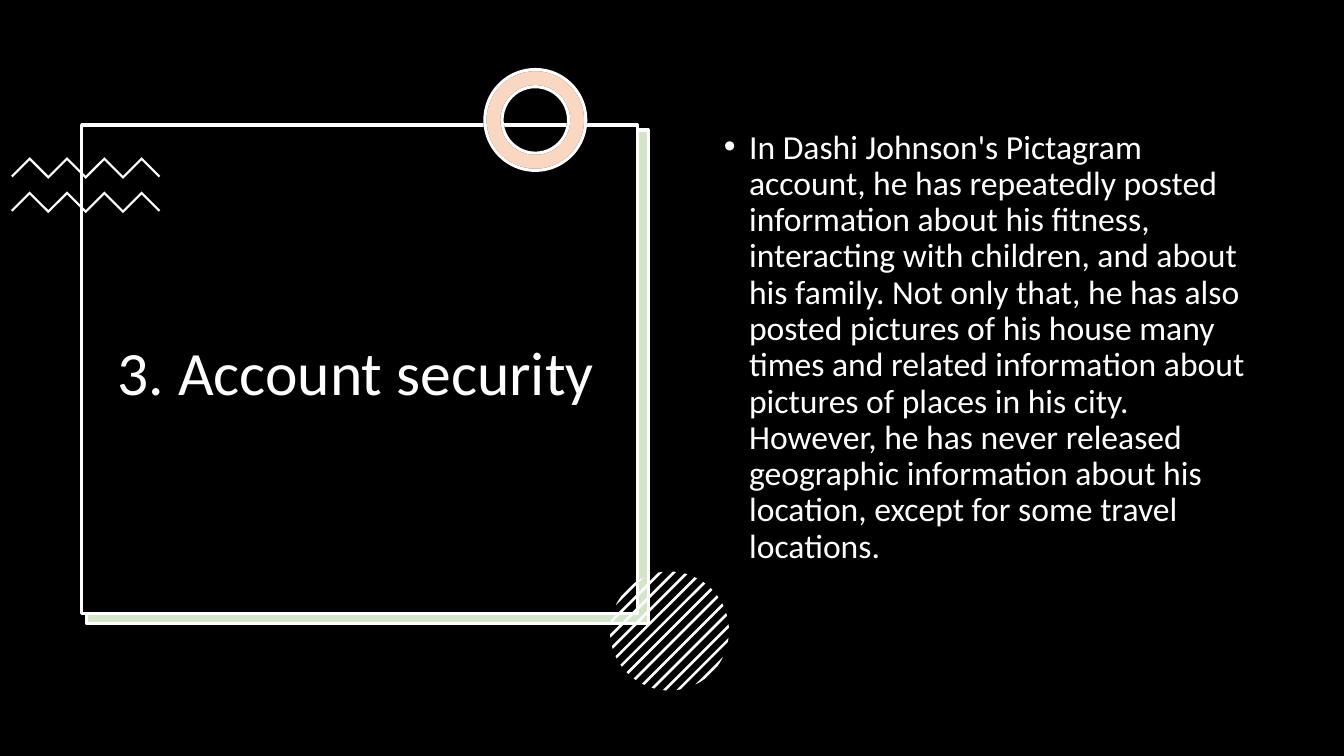
import math

import lxml.etree
import pptx
import pptx.dml.color
import pptx.enum.shapes
import pptx.enum.text
import pptx.oxml.ns
import pptx.util

Inches = pptx.util.Inches
Shape = pptx.enum.shapes.MSO_SHAPE
Align = pptx.enum.text.PP_ALIGN
Anchor = pptx.enum.text.MSO_ANCHOR

COLOURS = {"black": "000000", "white": "FFFFFF", "green": "70AD47", "orange": "ED7D31"}
BODY_TEXT = (
    "In Dashi Johnson's Pictagram account, he has repeatedly posted information "
    "about his fitness, interacting with children, and about his family. Not only "
    "that, he has also posted pictures of his house many times and related "
    "information about pictures of places in his city. However, he has never "
    "released geographic information about his location, except for some travel "
    "locations."
)


class SlideBuilder:
    """Holds the text style and the current slide."""

    font_name = "Calibri"
    line_width = pptx.util.Pt(2.25)

    def __init__(self, page):
        self.page = page

    def colour(self, name):
        return pptx.dml.color.RGBColor.from_string(COLOURS[name])

    def paint(self, shape, fill, line=None, opacity=None):
        shape.shadow.inherit = False
        shape.fill.solid()
        shape.fill.fore_color.rgb = self.colour(fill)
        if opacity is not None:
            tag = pptx.oxml.ns.qn("a:srgbClr")
            colour = next(shape.element.spPr.iter(tag))
            alpha = lxml.etree.SubElement(colour, pptx.oxml.ns.qn("a:alpha"))
            alpha.set("val", str(opacity * 1000))
        if line:
            shape.line.color.rgb = self.colour(line)
            shape.line.width = self.line_width
        else:
            shape.line.fill.background()

    def preset(self, kind, box, fill, line=None, opacity=None):
        shape = self.page.shapes.add_shape(kind, *map(Inches, box))
        self.paint(shape, fill, line, opacity)
        return shape

    def group(self):
        return self.page.shapes.add_group_shape()

    def outline(self, group, points, fill):
        start, *others = [(Inches(x), Inches(y)) for x, y in points]
        builder = group.shapes.build_freeform(*start)
        builder.add_line_segments(others, close=True)
        self.paint(builder.convert_to_shape(), fill)

    def placeholder(self, holder, box, text, size, frame_format, para_format):
        for name, value in zip(("left", "top", "width", "height"), box):
            setattr(holder, name, Inches(value))
        # Bring the text in front of the decoration
        holder.element.getparent().append(holder.element)
        frame = holder.text_frame
        frame_format = {
            "word_wrap": True,
            "auto_size": pptx.enum.text.MSO_AUTO_SIZE.NONE,
            **frame_format,
        }
        for name, value in frame_format.items():
            setattr(frame, name, value)
        para = frame.paragraphs[0]
        for name, value in para_format.items():
            setattr(para, name, value)
        span = para.add_run()
        span.text = text
        font_format = {"name": self.font_name, "size": pptx.util.Pt(size), "bold": False}
        for name, value in font_format.items():
            setattr(span.font, name, value)
        span.font.color.rgb = self.colour("white")
        return para

    def bullet(self, para, indent):
        properties = para._p.get_or_add_pPr()
        properties.set("marL", str(Inches(indent)))
        properties.set("indent", str(-Inches(indent)))
        for tag, key, value in (("a:buFont", "typeface", "Arial"), ("a:buChar", "char", "•")):
            mark = lxml.etree.SubElement(properties, pptx.oxml.ns.qn(tag))
            mark.set(key, value)


def zigzag(left, top, step=0.185, thickness=0.03, segments=8):
    upper = [
        (left + step * i, top + (step if i % 2 == 0 else 0))
        for i in range(segments + 1)
    ]
    cut = thickness / 2
    lower = [(x, y + thickness) for x, y in upper[1:-1]]
    (first_x, first_y), (last_x, last_y) = upper[0], upper[-1]
    lower = [(first_x + cut, first_y + cut), *lower, (last_x - cut, last_y + cut)]
    return upper + lower[::-1]


def stripe(centre_x, centre_y, radius, offset, width, steps=4):
    """A diagonal band whose two ends follow the circle."""
    distances = [offset + width * (i / steps - 0.5) for i in range(steps + 1)]
    spreads = [math.acos(distance / radius) for distance in distances]
    angles = [math.pi / 4 + a for a in spreads] + [math.pi / 4 - a for a in spreads[::-1]]
    return [
        (centre_x + radius * math.cos(a), centre_y + radius * math.sin(a))
        for a in angles
    ]


def main():
    deck = pptx.Presentation()
    deck.slide_width, deck.slide_height = Inches(13.33), Inches(7.5)
    page = deck.slides.add_slide(deck.slide_layouts[1])
    title, body = page.placeholders
    slide = SlideBuilder(page)

    # Backdrop and framed panel
    slide.preset(Shape.RECTANGLE, (0, 0, 13.33, 7.5), "black")
    slide.preset(Shape.RECTANGLE, (0.85, 1.3, 5.57, 4.9), "white")
    slide.preset(Shape.RECTANGLE, (0.86, 1.29, 5.57, 4.9), "green", "white", 30)
    slide.preset(Shape.RECTANGLE, (0.81, 1.24, 5.51, 4.85), "black", "white")

    # Zigzag lines
    zigzags = slide.group()
    for top in (1.56, 1.9):
        slide.outline(zigzags, zigzag(0.11, top), "white")

    # Ring: a white base under a translucent tint
    for fill, line, opacity in (("white", "black", None), ("orange", "white", 30)):
        ring = slide.preset(Shape.DONUT, (4.81, 0.69, 1, 1), fill, line, opacity)
        ring.adjustments[0] = 0.17

    # Striped circle
    stripes = slide.group()
    for i in range(-6, 7):
        slide.outline(stripes, stripe(6.64, 6.26, 0.59, 0.095 * i, 0.026), "white")

    # Title and body text
    slide.placeholder(
        title, (0.92, 1.52, 5.36, 4.42), "3. Account security ", 44,
        {"vertical_anchor": Anchor.MIDDLE},
        {"alignment": Align.CENTER, "line_spacing": 0.9},
    )
    para = slide.placeholder(
        body, (7.08, 1.24, 5.44, 4.76), BODY_TEXT, 24,
        {"vertical_anchor": Anchor.TOP},
        {"alignment": Align.LEFT, "line_spacing": 0.9, "space_before": pptx.util.Pt(10)},
    )
    slide.bullet(para, 0.25)

    deck.save("out.pptx")


if __name__ == "__main__":
    main()
